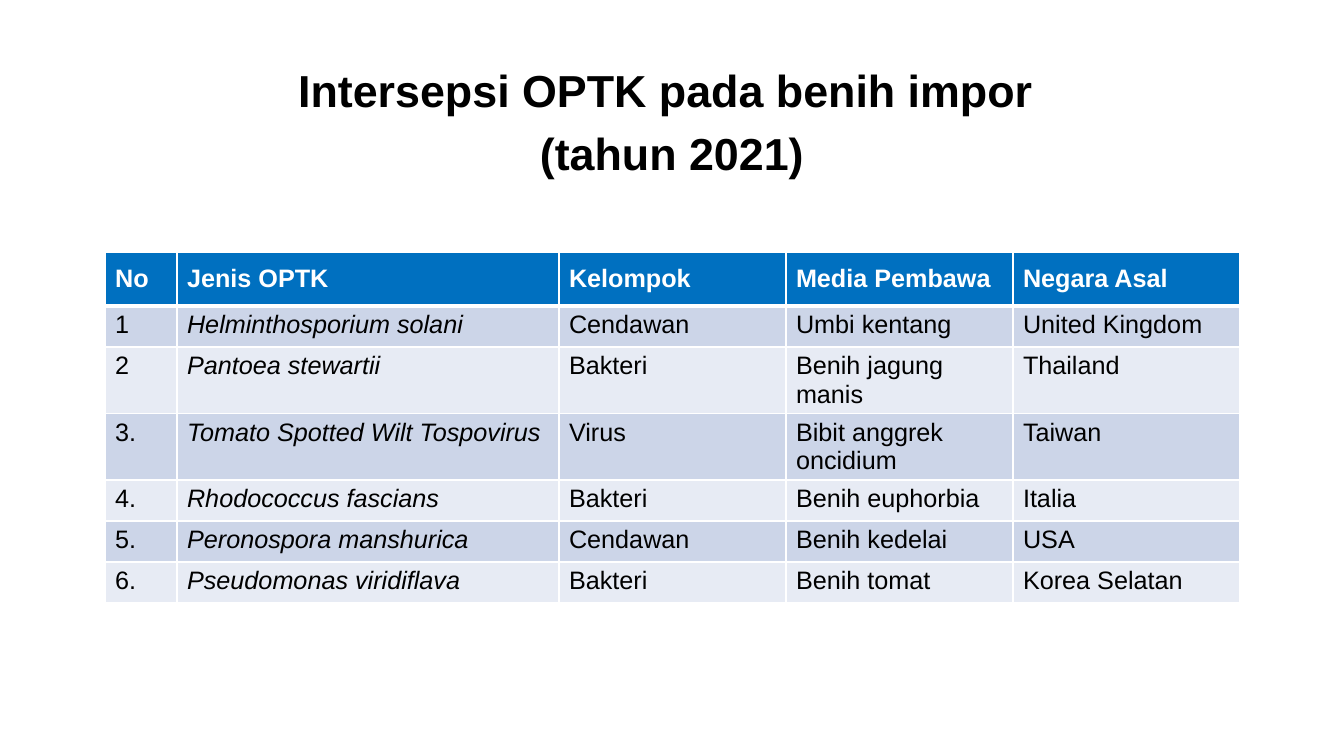
from lxml.etree import SubElement
from pptx import Presentation
from pptx.dml.color import RGBColor
from pptx.enum.text import MSO_ANCHOR as Anchor, MSO_AUTO_SIZE as AutoSize, PP_ALIGN as Align
from pptx.oxml.ns import qn
from pptx.util import Emu, Pt

COLORS = {
    "header": "0070C0",
    "odd": "CCD5E8",
    "even": "E7EBF4",
    "white": "FFFFFF",
    "black": "000000",
}
HEADINGS = ("No", "Jenis OPTK", "Kelompok", "Media Pembawa", "Negara Asal")
INTERCEPTIONS = (
    ("1", "Helminthosporium solani", "Cendawan", "Umbi kentang", "United Kingdom"),
    ("2", "Pantoea stewartii", "Bakteri", "Benih jagung manis", "Thailand"),
    ("3.", "Tomato Spotted Wilt Tospovirus", "Virus", "Bibit anggrek oncidium", "Taiwan"),
    ("4.", "Rhodococcus fascians", "Bakteri", "Benih euphorbia", "Italia"),
    ("5.", "Peronospora manshurica", "Cendawan", "Benih kedelai", "USA"),
    ("6.", "Pseudomonas viridiflava", "Bakteri", "Benih tomat", "Korea Selatan"),
)
COLUMN_WIDTHS = (72, 382, 227, 227, 227)
HEADER_HEIGHT = 54
ROW_HEIGHT = 41


def px(length):
    return Emu(round(length * 914400 / 100.8))


def color(name):
    return RGBColor.from_string(COLORS[name])


def write(paragraph, text, size=18, fill="black", bold=False, italic=False,
          align=Align.LEFT, line_spacing=None, before=None):
    paragraph.alignment = align
    paragraph.line_spacing = line_spacing
    if before is not None:
        paragraph.space_before = Pt(before)
    run = paragraph.add_run()
    run.text = text
    run.font.name = "Arial"
    run.font.size = Pt(size)
    run.font.bold = bold
    run.font.italic = italic
    run.font.color.rgb = color(fill)


def set_borders(cell, **widths):
    properties = cell._tc.get_or_add_tcPr()
    for side in ("L", "R", "T", "B"):
        line = SubElement(properties, qn(f"a:ln{side}"), w=str(Pt(widths.get(side, 1))))
        solid = SubElement(line, qn("a:solidFill"))
        SubElement(solid, qn("a:srgbClr"), val=COLORS["white"])


def fill_cell(cell, fill):
    cell.fill.solid()
    cell.fill.fore_color.rgb = color(fill)


def add_title(slide, left, top, width, height):
    title = slide.shapes.title
    title.left, title.top, title.width, title.height = map(px, (left, top, width, height))
    frame = title.text_frame
    frame.word_wrap = True
    frame.auto_size = AutoSize.NONE
    frame.vertical_anchor = Anchor.TOP
    style = dict(size=32, bold=True, align=Align.CENTER, line_spacing=0.9)
    write(frame.paragraphs[0], "Intersepsi OPTK pada benih impor ", before=0, **style)
    write(frame.add_paragraph(), "(tahun 2021)", before=10, **style)


def add_interceptions(slide, left, top, width):
    height = HEADER_HEIGHT + ROW_HEIGHT * len(INTERCEPTIONS)
    table = slide.shapes.add_table(
        len(INTERCEPTIONS) + 1, len(HEADINGS), *map(px, (left, top, width, height))
    ).table
    for column, share in zip(table.columns, COLUMN_WIDTHS):
        column.width = px(width * share / sum(COLUMN_WIDTHS))
    table.rows[0].height = px(HEADER_HEIGHT)
    for index, heading in enumerate(HEADINGS):
        cell = table.cell(0, index)
        set_borders(cell, B=3)
        fill_cell(cell, "header")
        cell.vertical_anchor = Anchor.MIDDLE
        write(cell.text_frame.paragraphs[0], heading, fill="white", bold=True)
    for number, record in enumerate(INTERCEPTIONS, 1):
        table.rows[number].height = px(ROW_HEIGHT)
        for index, text in enumerate(record):
            cell = table.cell(number, index)
            set_borders(cell, T=3 if number == 1 else 1)
            fill_cell(cell, "odd" if number % 2 else "even")
            write(cell.text_frame.paragraphs[0], text, italic=index == 1)


def main():
    presentation = Presentation()
    presentation.slide_width = px(1344)
    presentation.slide_height = px(756)
    slide = presentation.slides.add_slide(presentation.slide_layouts[5])
    slide.background.fill.solid()
    slide.background.fill.fore_color.rgb = color("white")
    add_interceptions(slide, 105, 252, sum(COLUMN_WIDTHS))
    add_title(slide, 34, 64, 1276, 80)
    presentation.save("out.pptx")


if __name__ == "__main__":
    main()
